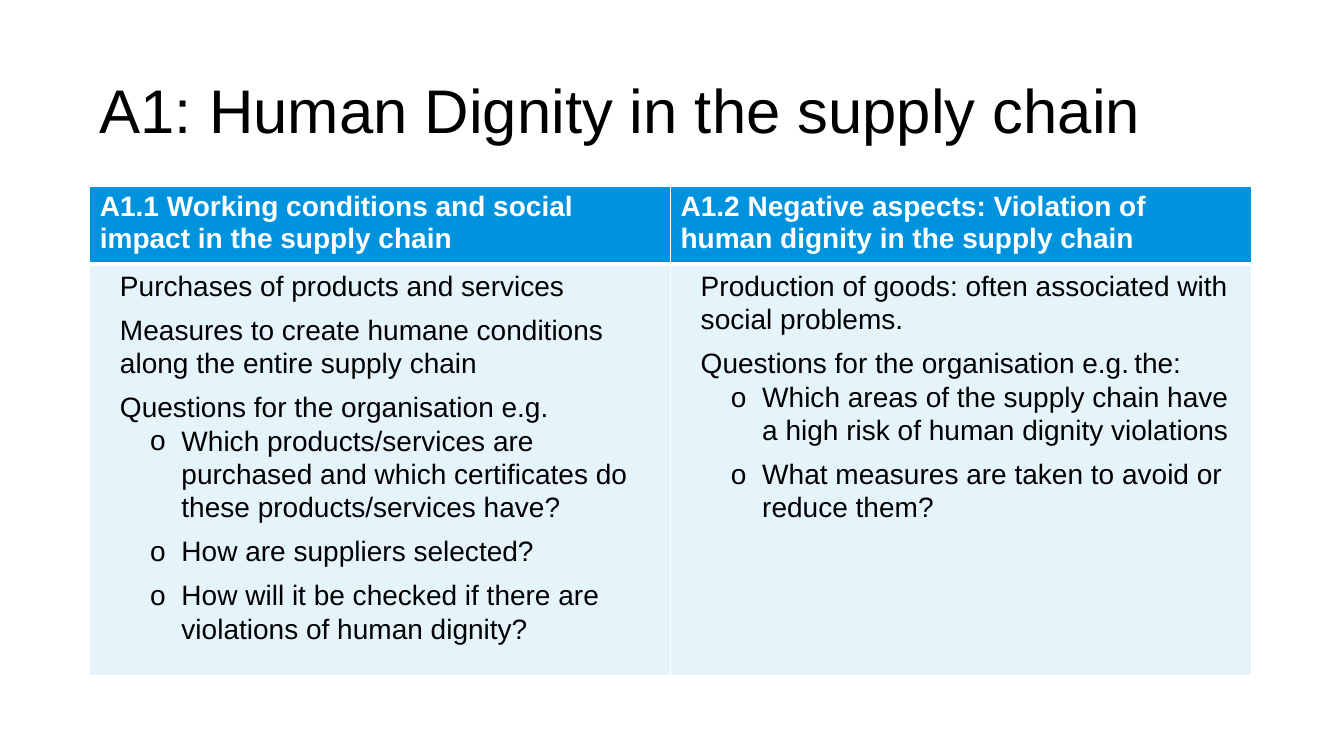
import pptx
import pptx.dml.color
import pptx.enum.text
import pptx.oxml
import pptx.oxml.ns
import pptx.util
from lxml import etree

COLOURS = {"blue": "0093DD", "white": "FFFFFF", "black": "000000"}
FONT = "Arial"
WIDTH, HEIGHT = 13.33, 7.5
qn = pptx.oxml.ns.qn

TITLE = "A1: Human Dignity in the supply chain"
HEADINGS = [
    "A1.1 Working conditions and social impact in the supply chain",
    "A1.2 Negative aspects: Violation of human dignity in the supply chain",
]
# Each entry is (kind of paragraph, text).
ASPECTS = [
    [
        ("point", "Purchases of products and services"),
        ("point", "Measures to create humane conditions along the entire supply chain"),
        ("lead", "Questions for the organisation e.g."),
        ("question", "Which products/services are purchased and which certificates do "
                     "these products/services have?"),
        ("question", "How are suppliers selected?"),
        ("question", "How will it be checked if there are violations of human dignity?"),
    ],
    [
        ("point", "Production of goods: often associated with social problems."),
        ("lead", "Questions for the organisation e.g.\tthe:"),
        ("question", "Which areas of the supply chain have a high risk of human "
                     "dignity violations"),
        ("question", "What measures are taken to avoid or reduce them?"),
    ],
]
# Left margin and first-line indent in inches, space after in points, level.
PARAGRAPH_STYLES = {
    "point": (0.2, 0, 7.5, 0),
    "lead": (0, 0.2, 0, 0),
    "question": (0.81, -0.31, 7.5, 1),
}
TAB_STOP = 4.67


class SlideBuilder:
    def __init__(self, presentation):
        self.slide = presentation.slides.add_slide(presentation.slide_layouts[6])

    def frame(self, left, top, width, height):
        """Turn shares of the slide's size into lengths."""
        return [pptx.util.Inches(share * size) for share, size in
                zip((left, top, width, height), (WIDTH, HEIGHT) * 2)]

    def colour(self, name):
        return pptx.dml.color.RGBColor.from_string(COLOURS[name])

    def style_font(self, paragraph, size, colour, bold=False):
        for run in paragraph.runs:
            run.font.name = FONT
            run.font.size = pptx.util.Pt(size)
            run.font.bold = bold
            run.font.color.rgb = self.colour(colour)

    def title(self, text, *shares):
        text_frame = self.slide.shapes.add_textbox(*self.frame(*shares)).text_frame
        text_frame.word_wrap = True
        text_frame.vertical_anchor = pptx.enum.text.MSO_ANCHOR.MIDDLE
        text_frame.text = text
        paragraph = text_frame.paragraphs[0]
        paragraph.line_spacing = 0.9
        self.style_font(paragraph, 44, "black")

    def style_cell(self, cell, top=1, bottom=1, opacity=100):
        properties = cell._tc.get_or_add_tcPr()
        for side, width in zip("LRTB", (1, 1, top, bottom)):
            line = etree.SubElement(properties, qn(f"a:ln{side}"),
                                    w=str(pptx.util.Pt(width)))
            fill = etree.SubElement(line, qn("a:solidFill"))
            etree.SubElement(fill, qn("a:srgbClr"), val=COLOURS["white"])
        cell.fill.solid()
        cell.fill.fore_color.rgb = self.colour("blue")
        if opacity < 100:
            colour = properties.find(qn("a:solidFill"))[0]
            etree.SubElement(colour, qn("a:alpha"), val=str(opacity * 1000))

    def body_paragraph(self, paragraph, kind, text):
        margin, indent, space_after, level = PARAGRAPH_STYLES[kind]
        paragraph.text = text
        paragraph.level = level
        properties = paragraph._p.get_or_add_pPr()
        properties.set("marL", str(pptx.util.Inches(margin)))
        properties.set("indent", str(pptx.util.Inches(indent)))
        if kind == "question":
            etree.SubElement(properties, qn("a:buFont"), typeface=FONT)
            etree.SubElement(properties, qn("a:buChar"), char="o")
        else:
            etree.SubElement(properties, qn("a:buNone"))
        if "\t" in text:
            tabs = etree.SubElement(properties, qn("a:tabLst"))
            etree.SubElement(tabs, qn("a:tab"), algn="l",
                             pos=str(pptx.util.Inches(TAB_STOP)))
        paragraph.line_spacing = 1.07
        paragraph.space_after = pptx.util.Pt(space_after)
        self.style_font(paragraph, 20, "black")

    def aspect_table(self, headings, aspects, row_heights, *shares):
        shape = self.slide.shapes.add_table(2, len(headings), *self.frame(*shares))
        table = shape.table
        table.horz_banding = False
        for row, height in zip(table.rows, row_heights):
            row.height = pptx.util.Inches(height * HEIGHT)
        for column, (heading, entries) in enumerate(zip(headings, aspects)):
            header, body = table.cell(0, column), table.cell(1, column)
            self.style_cell(header, bottom=3)
            header.text_frame.text = heading
            self.style_font(header.text_frame.paragraphs[0], 20, "white", bold=True)
            self.style_cell(body, top=3, opacity=10)
            text_frame = body.text_frame
            for index, (kind, text) in enumerate(entries):
                paragraph = (text_frame.add_paragraph() if index
                             else text_frame.paragraphs[0])
                self.body_paragraph(paragraph, kind, text)


def main():
    presentation = pptx.Presentation()
    presentation.slide_width = pptx.util.Inches(WIDTH)
    presentation.slide_height = pptx.util.Inches(HEIGHT)
    builder = SlideBuilder(presentation)
    left, table_top = 0.89 / WIDTH, 1.85 / HEIGHT
    row_heights = (0.71 / HEIGHT, 3.83 / HEIGHT)
    builder.title(TITLE, left, 0.4 / HEIGHT, 10.7 / WIDTH, 1.45 / HEIGHT)
    builder.aspect_table(HEADINGS, ASPECTS, row_heights,
                         left, table_top, 11.52 / WIDTH, sum(row_heights))
    presentation.save("out.pptx")


if __name__ == "__main__":
    main()
